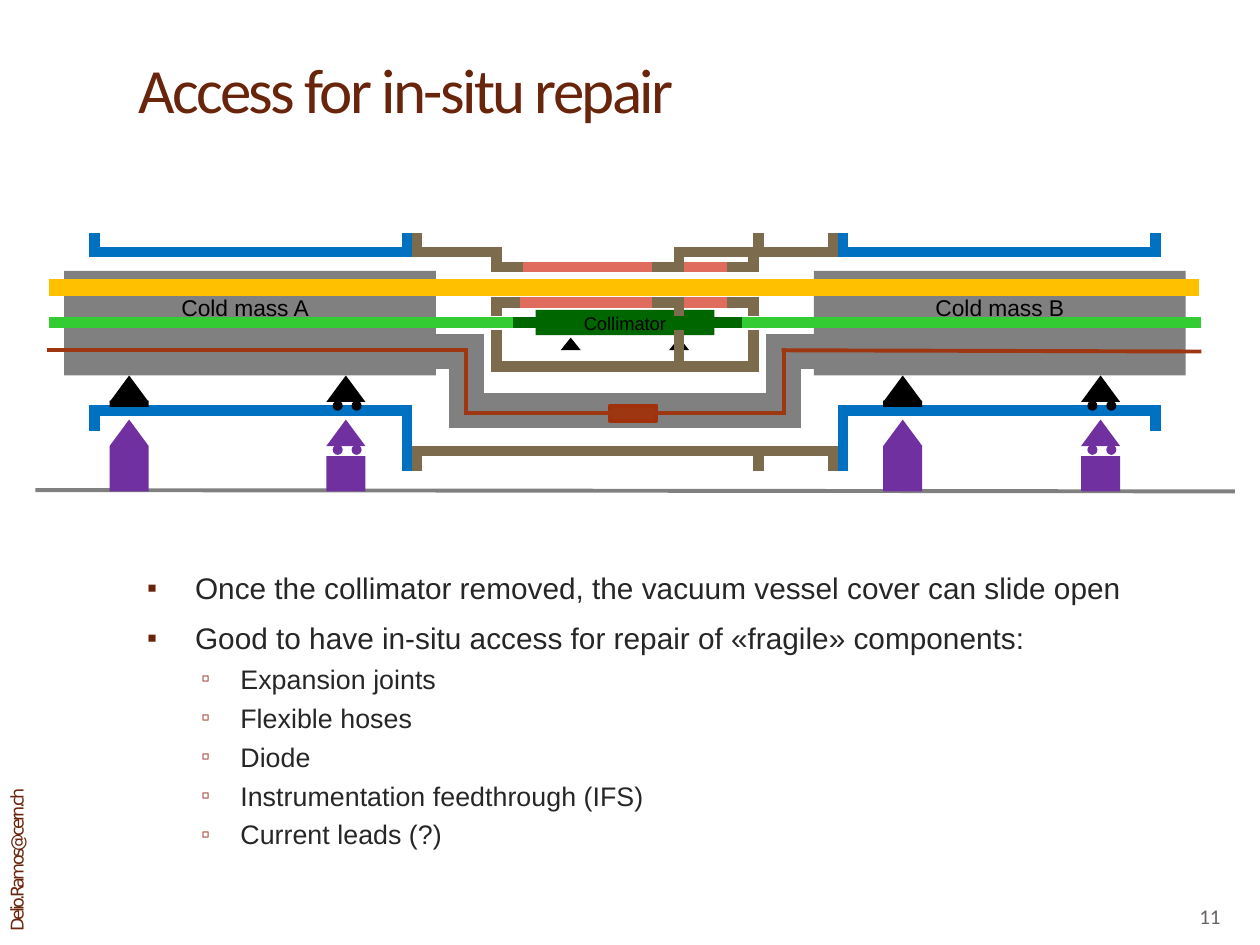
from pptx import Presentation
from pptx.dml.color import RGBColor
from pptx.enum.shapes import MSO_CONNECTOR, MSO_SHAPE
from pptx.enum.text import MSO_ANCHOR, PP_ALIGN
from pptx.oxml.ns import qn
from pptx.oxml.xmlchemy import OxmlElement
from pptx.util import Inches, Pt

STRAIGHT = MSO_CONNECTOR.STRAIGHT
RECT, TRIANGLE, OVAL = MSO_SHAPE.RECTANGLE, MSO_SHAPE.ISOSCELES_TRIANGLE, MSO_SHAPE.OVAL
TOP, BOTTOM = MSO_ANCHOR.TOP, MSO_ANCHOR.BOTTOM
LEFT, CENTER = PP_ALIGN.LEFT, PP_ALIGN.CENTER
LEFT_SIDE, RIGHT_SIDE = 1, 3

BROWN, BLUE, GREY, PURPLE = "7C6B4D", "0070C0", "808080", "7030A0"
BLACK, PINK, YELLOW, GREEN = "000000", "DF6C5D", "FFC000", "33CC33"
DARK_GREEN, COPPER, HEADING, BODY = "006600", "9E3611", "69240C", "262626"
AXIS = 4.96


def rgb(value):
    return RGBColor.from_string(value)


def mirror(x):
    return round(2 * AXIS - x, 2)


class CryostatSlide:
    """Draws the styled parts of the cryostat on one slide."""

    def __init__(self, slide):
        self.shapes = slide.shapes

    def line(self, start, end, colour, width=6, square=True):
        link = self.shapes.add_connector(STRAIGHT, *map(Inches, (*start, *end)))
        link.line.color.rgb = rgb(colour)
        link.line.width = Pt(width)
        properties = link._element.spPr
        if square:
            properties.find(qn("a:ln")).set("cap", "sq")
        properties.append(OxmlElement("a:effectLst"))
        return link

    def polyline(self, points, colour, width=6):
        return [self.line(a, b, colour, width) for a, b in zip(points, points[1:])]

    def shape(self, kind, box, fill):
        part = self.shapes.add_shape(kind, *map(Inches, box))
        part.shadow.inherit = False
        part.fill.solid()
        part.fill.fore_color.rgb = rgb(fill)
        part.line.fill.background()
        return part

    def style(self, paragraph, run, size, colour, font="Arial", spacing=0):
        for name, value in {"size": Pt(size), "name": font}.items():
            setattr(run.font, name, value)
        run.font.color.rgb = rgb(colour)
        if spacing:
            run._r.get_or_add_rPr().set("spc", str(int(spacing * 100)))

    def frame(self, box, anchor=TOP, rotation=0, inset=0.05):
        holder = self.shapes.add_textbox(*map(Inches, box))
        holder.rotation = rotation
        settings = {"word_wrap": True, "vertical_anchor": anchor, "margin_top": Inches(inset)}
        for name, value in settings.items():
            setattr(holder.text_frame, name, value)
        return holder.text_frame

    def text(self, words, box, size, colour, font="Arial", spacing=0, align=LEFT, **layout):
        paragraph = self.frame(box, **layout).paragraphs[0]
        paragraph.alignment = align
        run = paragraph.add_run()
        run.text = words
        self.style(paragraph, run, size, colour, font, spacing)

    def bullets(self, items, levels, box):
        body = self.frame(box)
        for index, (level, words) in enumerate(items):
            paragraph = body.paragraphs[0] if index == 0 else body.add_paragraph()
            look = levels[level]
            properties = paragraph._p.get_or_add_pPr()
            properties.set("marL", str(Inches(look["margin"])))
            properties.set("indent", str(Inches(look["indent"])))
            colour = OxmlElement("a:buClr")
            tint = OxmlElement("a:srgbClr")
            tint.set("val", look["mark_colour"])
            colour.append(tint)
            properties.append(colour)
            for tag, key, value in (
                ("a:buSzPct", "val", look["mark_size"]),
                ("a:buFont", "typeface", "Arial"),
                ("a:buChar", "char", look["mark"]),
            ):
                element = OxmlElement(tag)
                element.set(key, value)
                properties.append(element)
            before = Pt(look["before"] if index else 0)
            settings = {"level": level, "line_spacing": 1.05, "space_before": before}
            for name, value in settings.items():
                setattr(paragraph, name, value)
            run = paragraph.add_run()
            run.text = words
            self.style(paragraph, run, look["size"], BODY)

    def sleeve(self, edge, seam):
        inward = 1 if seam > edge else -1
        neck, bend = edge + 0.63 * inward, edge + 0.69 * inward
        lip = neck + 0.17 * inward
        for points in (
            [(neck, 2.04), (neck, 2.1)],
            [(edge, 1.89), (edge, 2), (neck, 2)],
            [(neck, 2.4), (neck, 2.47)],
            [(neck, 2.66), (neck, 2.91), (bend, 2.91), (seam, 2.91)],
            [(neck, 2.12), (lip, 2.12)],
            [(neck, 2.4), (lip, 2.4)],
            [(edge, 3.7), (edge, 3.58), (bend, 3.58), (seam, 3.58)],
        ):
            self.polyline(points, BROWN)

    def jack(self, x, top, colour, rolling):
        self.shape(TRIANGLE, (x, top, 0.31, 0.21), colour)
        if rolling:
            for offset in (0.05, 0.2):
                self.shape(OVAL, (x + offset, top + 0.2, 0.08, 0.08), colour)

    def vessel(self, outer, inner, fixed, sliding):
        self.polyline([(outer, 1.89), (outer, 2), (inner, 2), (inner, 1.89)], BLUE)
        self.polyline([(outer, 3.38), (outer, 3.26), (inner, 3.26), (inner, 3.38)], BLUE)
        self.line((inner, 3.39), (inner, 3.7), BLUE)
        self.jack(fixed, 2.98, BLACK, False)
        self.shape(RECT, (fixed, 3.18, 0.31, 0.05), BLACK)
        self.jack(sliding, 2.98, BLACK, True)


def draw_supports(page, stands):
    page.line((0.28, 3.89), (9.8, 3.9), GREY, 2.25, False)
    for fixed, sliding in stands:
        page.jack(fixed, 3.33, PURPLE, False)
        page.shape(RECT, (fixed, 3.54, 0.31, 0.36), PURPLE)
        page.jack(sliding, 3.33, PURPLE, True)
        page.shape(RECT, (sliding, 3.62, 0.31, 0.28), PURPLE)


def draw_collimator(page):
    collimator = page.shape(RECT, (4.25, 2.46, 1.42, 0.2), DARK_GREEN)
    for side, near, far in ((LEFT_SIDE, 4.25, 4.07), (RIGHT_SIDE, 5.67, 5.9)):
        pipe = page.line((near, 2.56), (far, 2.56), DARK_GREEN, square=False)
        pipe.begin_connect(collimator, side)
    for foot in (4.45, 5.31):
        page.shape(TRIANGLE, (foot, 2.68, 0.16, 0.1), BLACK)
    page.text("Collimator", (4.25, 2.43, 1.42, 0.29), 10.5, BLACK, align=CENTER)


def draw_centre(page):
    for left, right, y, colour, width in (
        (4.15, 5.77, 2.12, PINK, 6),
        (4.72, 5.31, 2.91, PINK, 6),
        (4.72, 5.31, 3.26, GREY, 20),
        (4.72, 5.31, 3.58, PINK, 6),
        (4.13, 5.77, 2.4, PINK, 6),
        (4.16, 5.77, 2.28, YELLOW, 10),
    ):
        page.line((left, y), (right, y), colour, width, False)
    splice = page.shape(RECT, (4.84, 3.22, 0.37, 0.12), COPPER)
    splice.line.color.rgb = rgb("A0310A")
    splice.line.width = Pt(2.25)
    return splice


def draw_cold_masses(page, splice):
    for left, duct in ((0.51, (3.46, 3.7)), (6.46, (6.28, 6.46))):
        page.shape(RECT, (left, 2.15, 2.95, 0.83), GREY)
        page.line((duct[0], 2.79), (duct[1], 2.79), GREY, 20, False)
    for left, right, y, colour, width in (
        (0.39, 4.07, 2.56, GREEN, 6),
        (5.89, 9.53, 2.56, GREEN, 6),
        (0.39, 4.17, 2.28, YELLOW, 10),
        (5.74, 9.52, 2.28, YELLOW, 10),
    ):
        page.line((left, y), (right, y), colour, width, False)
    for name, left in (("Cold mass A", 0.86), ("Cold mass B", 6.85)):
        page.text(name, (left, 2.28, 2.17, 0.32), 13, BLACK, align=CENTER)
    for side, start, bend, end in (
        (LEFT_SIDE, 4.84, 3.7, (0.39, 2.78)),
        (RIGHT_SIDE, 5.21, 6.22, (9.52, 2.79)),
    ):
        busbar = page.polyline([(start, 3.28), (bend, 3.28), (bend, 2.78), end], COPPER, 2.25)
        busbar[0].begin_connect(splice, side)


def main():
    deck = Presentation()
    deck.slide_width, deck.slide_height = Inches(10), Inches(7.5)
    page = CryostatSlide(deck.slides.add_slide(deck.slide_layouts[6]))
    page.text("Delio.Ramos@cern.ch", (-0.63, 6.55, 1.57, 0.31), 10, HEADING,
              "DejaVu Sans", -1.5, rotation=270)
    page.text("Access for in-situ repair", (1, 0.31, 8.5, 1), 36, HEADING,
              "Calibri", -1.5, inset=0.09)
    levels = [
        dict(margin=0.45, indent=-0.38, before=7, size=17,
             mark="▪", mark_colour=HEADING, mark_size="95000"),
        dict(margin=0.81, indent=-0.31, before=3, size=15.3,
             mark="▫", mark_colour="9B2D1F", mark_size="90000"),
    ]
    page.bullets([
        (0, "Once the collimator removed, the vacuum vessel cover can slide open"),
        (0, "Good to have in-situ access for repair of «fragile» components:"),
        (1, "Expansion joints"),
        (1, "Flexible hoses"),
        (1, "Diode"),
        (1, "Instrumentation feedthrough (IFS)"),
        (1, "Current leads (?)"),
    ], levels, (1, 4.46, 8.5, 2.28))
    page.text("11", (9.42, 7.02, 0.5, 0.4), 12, "696464", "Calibri", anchor=BOTTOM)

    stands = ((0.87, 2.59), (7.01, 8.58))
    page.polyline([(3.7, 2.79), (3.7, 3.26), (4.65, 3.26)], GREY, 20)
    page.sleeve(3.31, 4.72)
    page.sleeve(mirror(3.31), 5.31)
    draw_supports(page, stands)
    for outer, inner, stand in zip((0.75, mirror(0.75)), (3.23, mirror(3.23)), stands):
        page.vessel(outer, inner, *stand)
    page.polyline([(6.22, 2.79), (6.22, 3.26), (5.39, 3.26)], GREY, 20)
    draw_collimator(page)
    draw_cold_masses(page, draw_centre(page))
    page.sleeve(6.02, 4.72)
    deck.save("out.pptx")


if __name__ == "__main__":
    main()
